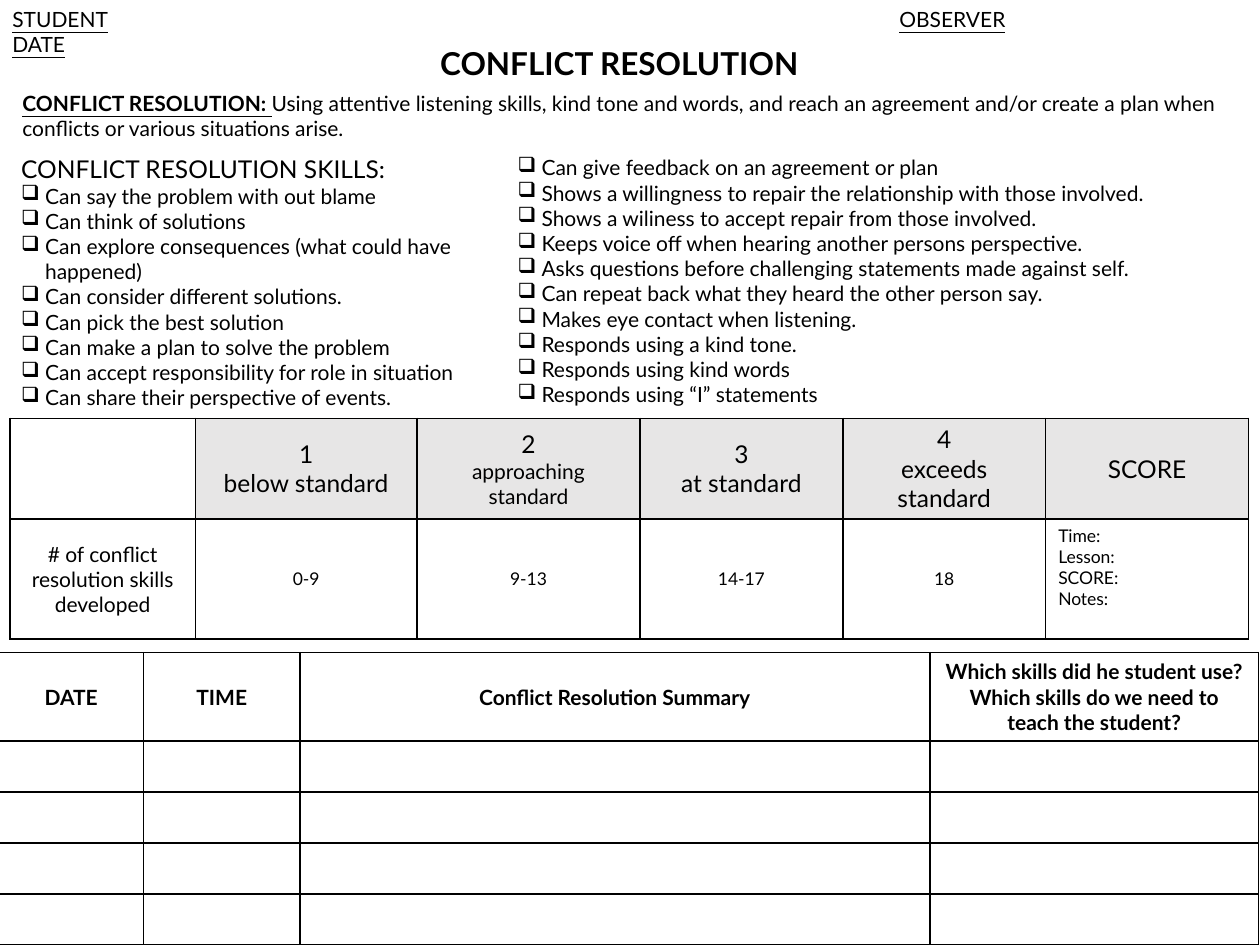
from dataclasses import dataclass

from lxml.etree import SubElement
from pptx import Presentation
from pptx.dml.color import RGBColor
from pptx.enum.text import MSO_ANCHOR as Anchor, MSO_AUTO_SIZE as AutoSize, PP_ALIGN as Align
from pptx.oxml import parse_xml
from pptx.oxml.ns import nsdecls, qn
from pptx.util import Inches, Pt


@dataclass(frozen=True)
class Theme:
    font: str = "Lato"
    ink: str = "000000"
    shade: str = "E7E6E6"
    title: float = 18
    heading: float = 14
    body: float = 12
    small: float = 10
    border: float = 1
    bullet: str = "❑"
    indent: float = 0.19


@dataclass(frozen=True)
class Span:
    text: str
    size: float
    bold: bool = False
    underline: bool = False


class Sheet:
    def __init__(self, slide, theme):
        self.slide = slide
        self.theme = theme

    def style(self, run, span):
        font = run.font
        font.name = self.theme.font
        font.size = Pt(span.size)
        font.bold = span.bold
        font.underline = span.underline
        font.color.rgb = RGBColor.from_string(self.theme.ink)

    def set_lines(self, frame, lines, align=Align.LEFT):
        frame.text = "\n".join("".join(span.text for span in line) for line in lines)
        for paragraph, line in zip(frame.paragraphs, lines):
            paragraph.alignment = align
            if len(line) > 1:
                paragraph.text = ""
                for span in line:
                    paragraph.add_run().text = span.text
            for run, span in zip(paragraph.runs, line):
                self.style(run, span)

    def title(self, text, box):
        heading = self.slide.shapes.title
        heading.left, heading.top, heading.width, heading.height = map(Inches, box)
        self.set_lines(heading.text_frame, [[Span(text, self.theme.title, bold=True)]], Align.CENTER)
        heading.text_frame.vertical_anchor = Anchor.MIDDLE

    def text(self, lines, box):
        frame = self.slide.shapes.add_textbox(*map(Inches, box)).text_frame
        frame.word_wrap = True
        frame.auto_size = AutoSize.SHAPE_TO_FIT_TEXT
        self.set_lines(frame, lines)
        return frame.paragraphs

    def tab_stop(self, paragraph, position):
        tabs = SubElement(paragraph._p.get_or_add_pPr(), qn("a:tabLst"))
        SubElement(tabs, qn("a:tab"), pos=str(Inches(position)), algn="l")

    def checklist(self, skills, box, heading=None):
        lines = [[Span(skill, self.theme.body)] for skill in skills]
        if heading:
            lines.insert(0, [Span(heading, self.theme.heading)])
        indent = Inches(self.theme.indent)
        for paragraph in self.text(lines, box)[-len(skills):]:
            properties = paragraph._p.get_or_add_pPr()
            properties.set("marL", str(indent))
            properties.set("indent", str(-indent))
            SubElement(properties, qn("a:buChar"), char=self.theme.bullet)

    def outline(self, cell):
        properties = cell._tc.get_or_add_tcPr()
        for position, side in enumerate("LRTB"):
            properties.insert(position, parse_xml(
                f'<a:ln{side} {nsdecls("a")} w="{Pt(self.theme.border)}"><a:solidFill>'
                f'<a:srgbClr val="{self.theme.ink}"/></a:solidFill></a:ln{side}>'))

    def table(self, left, top, widths, heights):
        box = map(Inches, (left, top, sum(widths), sum(heights)))
        grid = self.slide.shapes.add_table(len(heights), len(widths), *box).table
        grid.first_row = grid.horz_banding = False
        for column, width in zip(grid.columns, widths):
            column.width = Inches(width)
        for row, height in zip(grid.rows, heights):
            row.height = Inches(height)
        for cell in grid.iter_cells():
            cell.fill.background()
            self.outline(cell)
        return grid

    def fill_cell(self, cell, spans, shaded=False, align=Align.CENTER, anchor=Anchor.MIDDLE):
        self.set_lines(cell.text_frame, [[span] for span in spans], align)
        cell.vertical_anchor = anchor
        if shaded:
            cell.fill.solid()
            cell.fill.fore_color.rgb = RGBColor.from_string(self.theme.shade)


def add_rubric(sheet):
    theme = sheet.theme
    rubric = sheet.table(0.08, 3.32, [1.47, 1.76, 1.77, 1.61, 1.61, 1.61], [0.79, 0.95])
    levels = [
        ("1", "below standard", theme.heading, "0-9"),
        ("2", "approaching standard", theme.body, "9-13"),
        ("3", "at standard", theme.heading, "14-17"),
        ("4", "exceeds standard", theme.heading, "18"),
    ]
    for column, (level, label, size, count) in enumerate(levels, 1):
        sheet.fill_cell(rubric.cell(0, column),
                        [Span(level, theme.heading), Span(label, size)], shaded=True)
        sheet.fill_cell(rubric.cell(1, column), [Span(count, theme.small)])
    sheet.fill_cell(rubric.cell(0, 5), [Span("SCORE", theme.heading)], shaded=True)
    sheet.fill_cell(rubric.cell(1, 0),
                    [Span("# of conflict resolution skills developed", theme.body)])
    sheet.fill_cell(rubric.cell(1, 5),
                    [Span(field, theme.small) for field in ("Time:", "Lesson:", "SCORE:", "Notes:")],
                    align=Align.LEFT, anchor=Anchor.TOP)


def add_log(sheet):
    log = sheet.table(-0.01, 5.18, [1.15, 1.24, 5, 2.61], [0.7] + [(2.32 - 0.7) / 4] * 4)
    headings = [
        "DATE",
        "TIME",
        "Conflict Resolution Summary",
        "Which skills did he student use? Which skills do we need to teach the student?",
    ]
    for column, heading in enumerate(headings):
        sheet.fill_cell(log.cell(0, column), [Span(heading, sheet.theme.body, bold=True)])


def main():
    deck = Presentation()
    deck.slide_width, deck.slide_height = Inches(10), Inches(7.5)
    theme = Theme()
    sheet = Sheet(deck.slides.add_slide(deck.slide_layouts[5]), theme)

    sheet.title("CONFLICT RESOLUTION", (0, 0.3, 9.83, 0.4))
    add_rubric(sheet)
    sheet.text([[
        Span("CONFLICT RESOLUTION: ", theme.body, bold=True, underline=True),
        Span("Using attentive listening skills, kind tone and words, and reach an agreement "
             "and/or create a plan when conflicts or various situations arise.", theme.body),
    ]], (0.08, 0.67, 9.83, 0.5))
    names, _ = sheet.text([
        [Span("STUDENT", theme.body, underline=True), Span("\t", theme.body),
         Span("OBSERVER", theme.body, underline=True)],
        [Span("DATE", theme.body, underline=True)],
    ], (0, 0, 10, 0.5))
    sheet.tab_stop(names, 7.04)
    sheet.checklist([
        "Can say the problem with out blame",
        "Can think of solutions",
        "Can explore consequences (what could have happened)",
        "Can consider different solutions.",
        "Can pick the best solution",
        "Can make a plan to solve the problem",
        "Can accept responsibility for role in situation",
        "Can share their perspective of events.",
    ], (0.07, 1.17, 3.94, 2.79), heading="CONFLICT RESOLUTION SKILLS:")
    add_log(sheet)
    sheet.checklist([
        "Can give feedback on an agreement or plan",
        "Shows a willingness to repair the relationship with those involved.",
        "Shows a wiliness to accept repair from those involved.",
        "Keeps voice off when hearing another persons perspective.",
        "Asks questions before challenging statements made against self.",
        "Can repeat back what they heard the other person say.",
        "Makes eye contact when listening.",
        "Responds using a kind tone.",
        "Responds using kind words",
        "Responds using “I” statements",
    ], (4.01, 1.18, 5.9, 2.56))

    deck.save("out.pptx")


if __name__ == "__main__":
    main()
